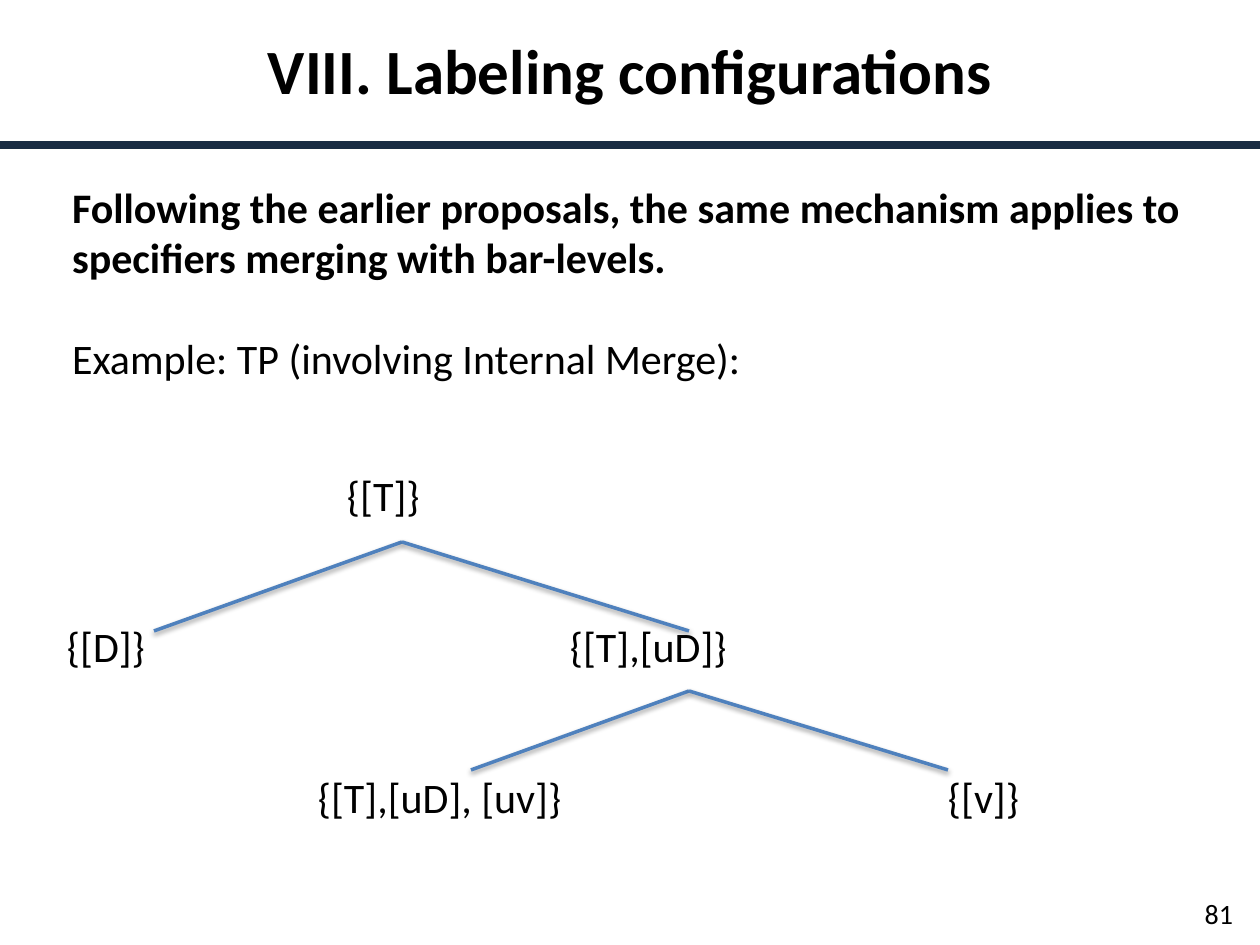
from dataclasses import dataclass

from lxml.etree import SubElement
from pptx import Presentation
from pptx.dml.color import RGBColor
from pptx.enum.shapes import MSO_CONNECTOR as Connector
from pptx.enum.text import MSO_ANCHOR as Anchor, PP_ALIGN as Align
from pptx.oxml.ns import qn
from pptx.slide import Slide
from pptx.util import Emu, Pt

EMU_PER_PX = 914400 // 126
FONT = "Calibri"
BLACK = RGBColor(0x00, 0x00, 0x00)
NAVY = RGBColor(0x19, 0x2C, 0x43)
BLUE = RGBColor(0x4F, 0x81, 0xBD)


@dataclass(frozen=True)
class Line:
    text: str
    size: int = 24
    bold: bool = False
    align: Align = Align.LEFT
    space_before: int = 0


@dataclass(frozen=True)
class Node:
    text: str
    left: int
    top: int
    width: int


@dataclass(frozen=True)
class Branching:
    apex: tuple[int, int]
    ends: tuple[tuple[int, int], tuple[int, int]]


TITLE = Line("VIII. Labeling configurations", 36, True, Align.CENTER)
BODY = [
    Line(
        "Following the earlier proposals, the same mechanism applies to "
        "specifiers merging with bar-levels.",
        bold=True,
    ),
    Line("Example: TP (involving Internal Merge):", space_before=29),
]
PAGE_NUMBER = Line("81", 16, align=Align.RIGHT)

FIRST_ROW, ROW_STEP, ROW_HEIGHT = 470, 151, 51
ROWS = [FIRST_ROW + ROW_STEP * level for level in range(3)]
NODES = [
    Node("{[T]}", 347, ROWS[0], 80),
    Node("{[D]}", 67, ROWS[1], 86),
    Node("{[T],[uD]}", 570, ROWS[1], 166),
    Node("{[T],[uD], [uv]}", 318, ROWS[2], 255),
    Node("{[v]}", 948, ROWS[2], 80),
]
BRANCHINGS = [
    Branching((402, 542), ((154, 631), (689, 631))),
    Branching((689, 691), ((471, 770), (948, 770))),
]


def px(length: int) -> Emu:
    return Emu(length * EMU_PER_PX)


def add_text(page: Slide, lines: list[Line], left: int, top: int, width: int,
             height: int, inset: int = 0, anchor: Anchor = Anchor.TOP) -> None:
    box = page.shapes.add_textbox(px(left), px(top), px(width), px(height))
    frame = box.text_frame
    frame.word_wrap = True
    frame.vertical_anchor = anchor
    frame.margin_left = frame.margin_right = px(inset)
    frame.margin_top = frame.margin_bottom = px(inset // 2)
    frame.text = "\n".join(line.text for line in lines)
    for para, line in zip(frame.paragraphs, lines):
        para.alignment = line.align
        para.space_before = Pt(line.space_before)
        for span in para.runs:
            span.font.name = FONT
            span.font.size = Pt(line.size)
            span.font.bold = line.bold
            span.font.color.rgb = BLACK


def add_line(page: Slide, start: tuple[int, int], end: tuple[int, int],
             color: RGBColor, weight: float, shadow: bool = False) -> None:
    points = [px(length) for length in (*start, *end)]
    line = page.shapes.add_connector(Connector.STRAIGHT, *points)
    line.line.color.rgb = color
    line.line.width = Pt(weight)
    effects = SubElement(line._element.spPr, qn("a:effectLst"))
    if shadow:
        outer = SubElement(effects, qn("a:outerShdw"), blurRad=str(Pt(3.1)),
                           dist=str(Pt(1.6)), dir="5400000", rotWithShape="0")
        tint = SubElement(outer, qn("a:srgbClr"), val=str(BLACK))
        SubElement(tint, qn("a:alpha"), val="38000")


def main() -> None:
    deck = Presentation()
    deck.slide_width, deck.slide_height = px(1260), px(945)
    page = deck.slides.add_slide(deck.slide_layouts[6])

    add_line(page, (0, 145), (1260, 145), NAVY, 4.5)
    add_text(page, [PAGE_NUMBER], 1164, 888, 81, 50, 12, Anchor.MIDDLE)
    add_text(page, [TITLE], 10, 26, 1240, 89, 12)
    add_text(page, BODY, 60, 175, 1141, 220, 12)
    for node in NODES:
        add_text(page, [Line(node.text)], node.left, node.top, node.width, ROW_HEIGHT)
    for branching in BRANCHINGS:
        for end in branching.ends:
            add_line(page, branching.apex, end, BLUE, 2, shadow=True)

    deck.save("out.pptx")


if __name__ == "__main__":
    main()
